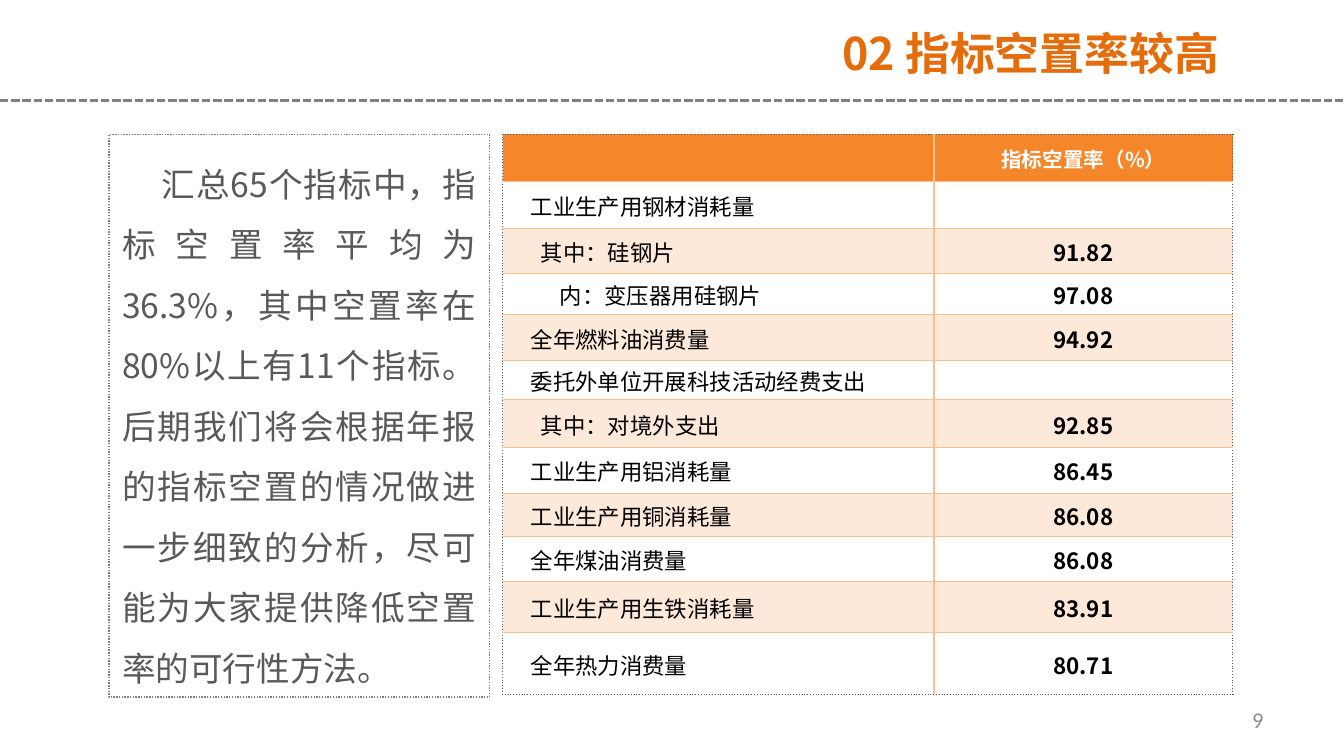
from lxml.etree import SubElement
from pptx import Presentation
from pptx.dml.color import RGBColor
from pptx.enum.dml import MSO_LINE
from pptx.enum.shapes import MSO_CONNECTOR, MSO_SHAPE
from pptx.enum.text import MSO_ANCHOR, PP_ALIGN
from pptx.oxml.ns import qn
from pptx.util import Cm, Pt

ORANGE = RGBColor(0xF6, 0x86, 0x2A)
RUST = RGBColor(0xE4, 0x6C, 0x0A)
PEACH = RGBColor(0xFD, 0xE9, 0xD9)
SAND = RGBColor(0xFA, 0xC0, 0x90)
DARK = RGBColor(0x59, 0x59, 0x59)
GRAY = RGBColor(0x80, 0x80, 0x80)
PALE = RGBColor(0x8C, 0x8C, 0x8C)
WHITE = RGBColor(0xFF, 0xFF, 0xFF)
BLACK = RGBColor(0, 0, 0)

INDENT = (0.53, 0.72, 1.08)
WIDTHS = (8.15, 5.65)
ROWS = [
    ("", "指标空置率（%）", 0, 0.89),
    ("工业生产用钢材消耗量", "", 0, 0.89),
    ("其中：硅钢片", "91.82", 1, 0.84),
    ("内：变压器用硅钢片", "97.08", 2, 0.79),
    ("全年燃料油消费量", "94.92", 0, 0.86),
    ("委托外单位开展科技活动经费支出", "", 0, 0.74),
    ("其中：对境外支出", "92.85", 1, 0.91),
    ("工业生产用铝消耗量", "86.45", 0, 0.86),
    ("工业生产用铜消耗量", "86.08", 0, 0.81),
    ("全年煤油消费量", "86.08", 0, 0.86),
    ("工业生产用生铁消耗量", "83.91", 0, 0.97),
    ("全年热力消费量", "80.71", 0, 1.17),
]
BODY = (
    "汇总65个指标中，指标空置率平均为36.3%，其中空置率在80%以上有11个指标。"
    "后期我们将会根据年报的指标空置的情况做进一步细致的分析，"
    "尽可能为大家提供降低空置率的可行性方法。"
)


class Page:
    font = "Noto Sans CJK SC"

    def __init__(self, deck):
        self.slide = deck.slides.add_slide(deck.slide_layouts[5])
        self.shapes = self.slide.shapes

    def label(self, frame, text, size, color, align, bold=False, font=None):
        frame.text = text
        para = frame.paragraphs[0]
        para.alignment = align
        for run in para.runs:
            run.font.size = Pt(size)
            run.font.bold = bold
            run.font.color.rgb = color
            run.font.name = font or self.font
            SubElement(run.font._element, qn("a:ea"), typeface=self.font)
        if not text:
            para._p.get_or_add_endParaRPr().set("sz", str(size * 100))
        return para

    def title(self, text, left, top, width, height):
        shape = self.shapes.title
        shape.left, shape.top = Cm(left), Cm(top)
        shape.width, shape.height = Cm(width), Cm(height)
        shape.text_frame.vertical_anchor = MSO_ANCHOR.TOP
        self.label(shape.text_frame, text, 24, RUST, PP_ALIGN.RIGHT, True)

    def rule(self, top, width):
        line = self.shapes.add_connector(
            MSO_CONNECTOR.STRAIGHT, 0, Cm(top), Cm(width), Cm(top))
        line.line.color.rgb = GRAY
        line.line.width = Pt(1.5)
        line.line.dash_style = MSO_LINE.SQUARE_DOT
        SubElement(line._element.spPr, qn("a:effectLst"))

    def panel(self, text, left, top, width, height):
        shape = self.shapes.add_shape(
            MSO_SHAPE.RECTANGLE, Cm(left), Cm(top), Cm(width), Cm(height))
        shape.shadow.inherit = False
        shape.fill.background()
        shape.line.color.rgb = GRAY
        shape.line.width = Pt(0.75)
        shape.line.dash_style = MSO_LINE.ROUND_DOT
        frame = shape.text_frame
        frame.word_wrap = True
        frame.vertical_anchor = MSO_ANCHOR.MIDDLE
        para = self.label(frame, text, 18, DARK, PP_ALIGN.JUSTIFY)
        para.line_spacing = 1.5
        para._p.get_or_add_pPr().set("indent", str(Cm(0.74)))

    def number(self, text, left, top, width, height):
        box = self.shapes.add_textbox(
            Cm(left), Cm(top), Cm(width), Cm(height))
        box.text_frame.word_wrap = True
        box.text_frame.vertical_anchor = MSO_ANCHOR.MIDDLE
        self.label(box.text_frame, text, 12, PALE, PP_ALIGN.RIGHT,
                   font="Calibri")

    def edge(self, cell, side, outer):
        width = 0.75 if outer or side in "LR" else 0.5
        line = SubElement(cell._tc.get_or_add_tcPr(), qn("a:ln" + side),
                          w=str(Pt(width)))
        fill = SubElement(line, qn("a:solidFill"))
        SubElement(fill, qn("a:srgbClr"), val=str(DARK if outer else SAND))
        SubElement(line, qn("a:prstDash"), val="sysDot" if outer else "solid")

    def cell(self, grid, row, col, text, level):
        cell = grid.cell(row, col)
        cell.margin_left = Cm(0.03 if col else INDENT[level])
        cell.margin_right = cell.margin_top = Cm(0.03)
        cell.margin_bottom = 0
        cell.vertical_anchor = MSO_ANCHOR.MIDDLE
        outer = {"L": col == 0, "R": col == len(WIDTHS) - 1,
                 "T": row == 0, "B": row == len(ROWS) - 1}
        for side, flag in outer.items():
            self.edge(cell, side, flag)
        if row % 2:
            cell.fill.background()
        else:
            cell.fill.solid()
            cell.fill.fore_color.rgb = PEACH if row else ORANGE
        self.label(cell.text_frame, text, 12 if row else 11,
                   BLACK if row else WHITE,
                   PP_ALIGN.CENTER if col else PP_ALIGN.LEFT, col == 1)

    def table(self, left, top):
        height = sum(row[3] for row in ROWS)
        grid = self.shapes.add_table(
            len(ROWS), len(WIDTHS), Cm(left), Cm(top),
            Cm(sum(WIDTHS)), Cm(height)).table
        grid.horz_banding = False
        grid.first_row = False
        for col, width in enumerate(WIDTHS):
            grid.columns[col].width = Cm(width)
        for row, (name, rate, level, tall) in enumerate(ROWS):
            grid.rows[row].height = Cm(tall)
            for col, text in enumerate((name, rate)):
                self.cell(grid, row, col, text, level)


def main():
    deck = Presentation()
    deck.slide_width, deck.slide_height = Cm(25.4), Cm(14.29)
    page = Page(deck)
    page.rule(1.9, 25.4)
    page.number("9", 18.21, 13.23, 5.92, 0.76)
    page.title("02 指标空置率较高", 12.29, 0.36, 11, 2.31)
    page.panel(BODY, 2.06, 2.54, 7.19, 10.64)
    page.table(9.5, 2.54)
    deck.save("out.pptx")


if __name__ == "__main__":
    main()
